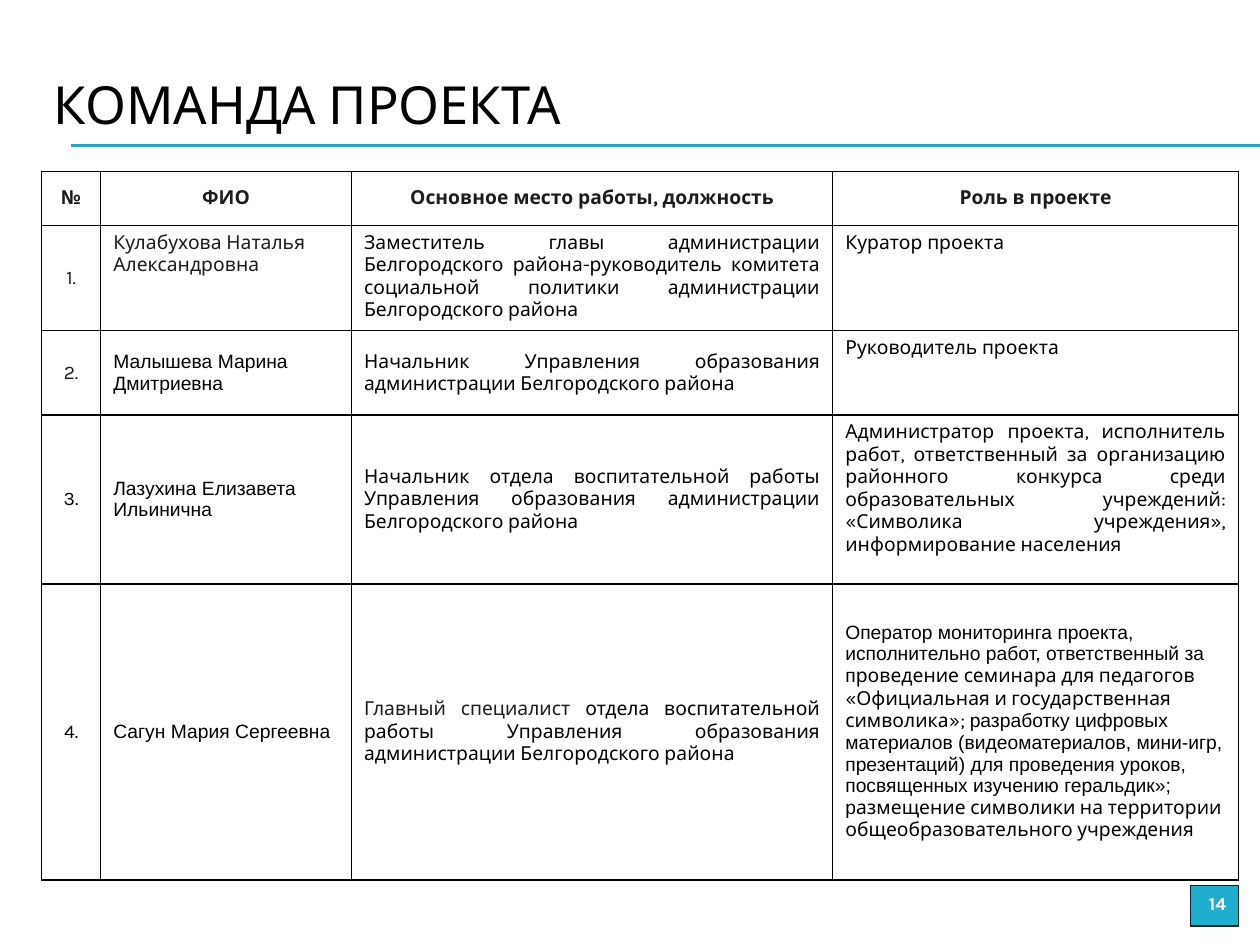
from lxml.etree import SubElement
from pptx import Presentation
from pptx.dml.color import RGBColor
from pptx.enum.shapes import MSO_CONNECTOR, MSO_SHAPE
from pptx.enum.text import MSO_ANCHOR, PP_ALIGN
from pptx.oxml import parse_xml
from pptx.oxml.ns import nsdecls, qn
from pptx.util import Inches, Pt

BLACK, DARK, WHITE = "000000", "1C1C1C", "FFFFFF"
LEFT, MID, JUST = PP_ALIGN.LEFT, PP_ALIGN.CENTER, PP_ALIGN.JUSTIFY
TOP, CORE = MSO_ANCHOR.TOP, MSO_ANCHOR.MIDDLE


def color(code):
    return RGBColor.from_string(code)


def style(run, size, code, face="Karla", bold=False):
    run.font.size = Pt(size)
    run.font.name = face
    run.font.bold = bold
    run.font.color.rgb = color(code)


prs = Presentation()
prs.slide_width = Inches(10)
prs.slide_height = Inches(7.5)
slide = prs.slides.add_slide(prs.slide_layouts[6])
shapes = slide.shapes

for y in (1.15, 1.16):
    rule = shapes.add_connector(MSO_CONNECTOR.STRAIGHT, Inches(0.56), Inches(y), Inches(10), Inches(y))
    rule.line.color.rgb = color("2DA2BF")
    rule.line.width = Pt(0.75)
    SubElement(rule.element.spPr, qn("a:effectLst"))

title = shapes.add_textbox(Inches(0.33), Inches(0.36), Inches(9.5), Inches(0.92))
frame = title.text_frame
frame.word_wrap = True
frame.vertical_anchor = CORE
frame.text = "КОМАНДА ПРОЕКТА"
style(frame.paragraphs[0].runs[0], 30, BLACK)

heads = ["№", "ФИО", "Основное место работы, должность", "Роль в проекте"]
team = [
    [
        ("Кулабухова Наталья Александровна", "Karla", DARK, LEFT, TOP),
        ("Заместитель главы администрации Белгородского района-руководитель комитета "
         "социальной политики администрации Белгородского района", "Karla", BLACK, JUST, TOP),
        ("Куратор проекта", "Karla", BLACK, LEFT, TOP),
    ],
    [
        ("Малышева Марина Дмитриевна", "Arial", BLACK, LEFT, CORE),
        ("Начальник Управления образования администрации Белгородского района",
         "Karla", BLACK, JUST, CORE),
        ("Руководитель проекта", "Karla", BLACK, JUST, TOP),
    ],
    [
        ("Лазухина Елизавета Ильинична", "Arial", BLACK, LEFT, CORE),
        ("Начальник отдела воспитательной работы Управления образования администрации "
         "Белгородского района", "Karla", BLACK, JUST, CORE),
        ("Администратор проекта, исполнитель работ, ответственный за организацию районного "
         "конкурса среди образовательных учреждений: «Символика учреждения», "
         "информирование населения", "Karla", BLACK, JUST, TOP),
    ],
    [
        ("Сагун Мария Сергеевна", "Arial", BLACK, LEFT, CORE),
        ([("Главный специалист ", "Karla", DARK),
          ("отдела воспитательной работы Управления образования администрации "
           "Белгородского района", "Karla", BLACK)], "", "", JUST, CORE),
        ([("Оператор мониторинга проекта, исполнительно работ, ответственный за п", "Arial", BLACK),
          ("роведение семинара для педагогов «Официальная и государственная символика»; ",
           "Karla", BLACK),
          ("разработку цифровых материалов (видеоматериалов, мини-игр, презентаций) для "
           "проведения уроков, посвященных изучению геральдик»; р", "Arial", BLACK),
          ("азмещение символики на территории общеобразовательного учреждения",
           "Karla", BLACK)], "", "", LEFT, CORE),
    ],
]
rows = [[(head, "Karla", DARK, MID, CORE) for head in heads]]
for num, row in enumerate(team, 1):
    rows.append([(f"{num}.", "Karla", DARK if num < 3 else BLACK, MID, CORE)] + row)

widths = [0.47, 1.99, 3.82, 3.22]
highs = [0.43, 0.79, 0.67, 1.34, 2.35]
grid = shapes.add_table(len(rows), len(heads), Inches(0.33), Inches(1.36),
                        Inches(sum(widths)), Inches(sum(highs))).table
for col, width in zip(grid.columns, widths):
    col.width = Inches(width)
for line, high in zip(grid.rows, highs):
    line.height = Inches(high)

for r, row in enumerate(rows):
    for c, (text, face, code, align, anchor) in enumerate(row):
        cell = grid.cell(r, c)
        cell.vertical_anchor = anchor
        cell.margin_left = cell.margin_right = Inches(0.1)
        cell.margin_top = cell.margin_bottom = Inches(0.05)
        para = cell.text_frame.paragraphs[0]
        para.alignment = align
        parts = [(text, face, code)] if isinstance(text, str) else text
        for words, font, tone in parts:
            run = para.add_run()
            run.text = words
            style(run, 11, tone, font, r == 0)
        props = cell._tc.get_or_add_tcPr()
        for side in ("lnL", "lnR", "lnT", "lnB"):
            props.append(parse_xml(
                f'<a:{side} {nsdecls("a")} w="12700"><a:solidFill>'
                f'<a:srgbClr val="{BLACK}"/></a:solidFill></a:{side}>'))
        cell.fill.background()

badge = shapes.add_shape(MSO_SHAPE.RECTANGLE, Inches(9.45), Inches(7.03), Inches(0.38), Inches(0.32))
badge.shadow.inherit = False
badge.fill.solid()
badge.fill.fore_color.rgb = color("1FAECD")
badge.line.color.rgb = color("062329")
badge.line.width = Pt(0.75)
frame = badge.text_frame
frame.word_wrap = True
frame.vertical_anchor = TOP
frame.text = "14"
frame.paragraphs[0].alignment = PP_ALIGN.RIGHT
style(frame.paragraphs[0].runs[0], 10.5, WHITE, bold=True)

prs.save("out.pptx")
